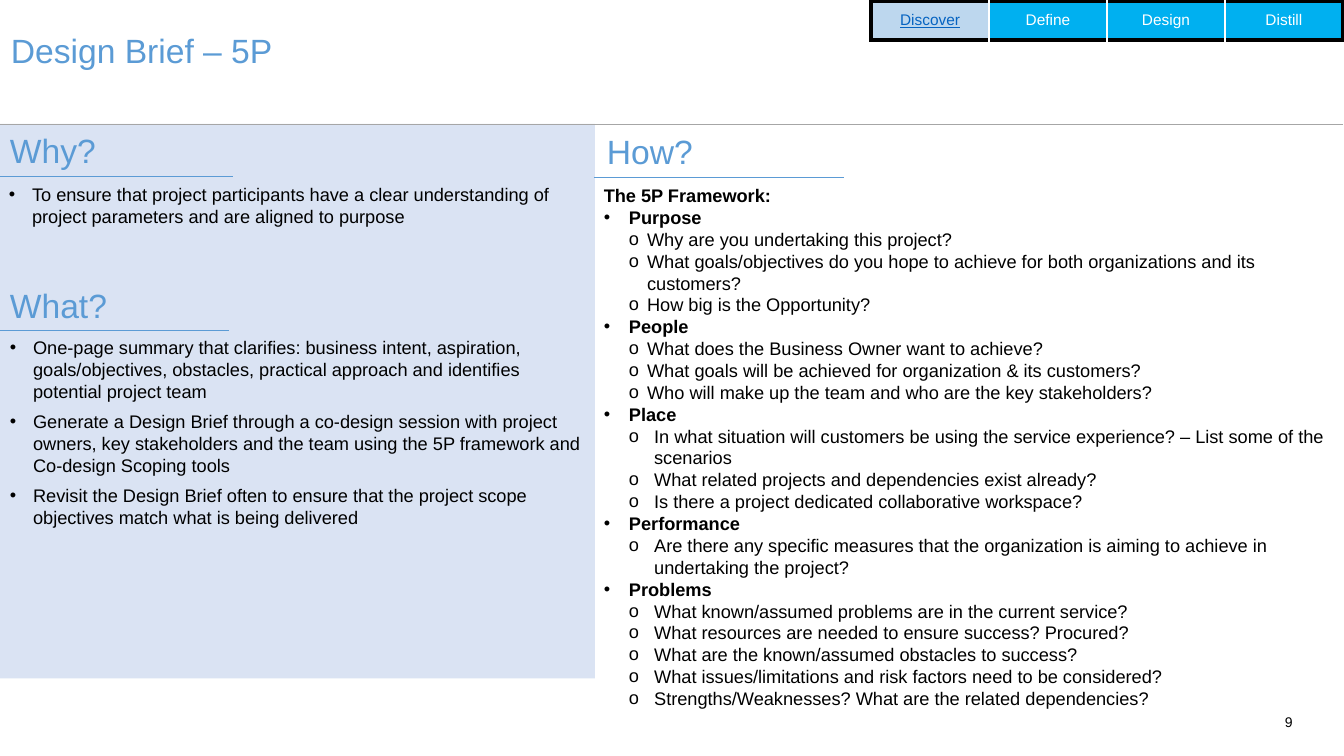
from dataclasses import dataclass

from pptx import Presentation
from pptx import util as u
from pptx.dml.color import RGBColor
from pptx.enum import shapes, text
from pptx.oxml.ns import qn
from lxml import etree


@dataclass(frozen=True)
class Theme:
    font: str = "Arial"
    heading: str = "5B9BD5"
    body: str = "000000"
    white: str = "FFFFFF"
    panel: str = "DAE3F3"
    rule: str = "A6A6A6"
    tab: str = "00B0F0"
    active_tab: str = "BDD7EE"
    link: str = "0563C1"
    heading_size: float = 24
    body_size: float = 13
    tab_size: float = 11
    number_size: float = 10


def rgb(value):
    return RGBColor.from_string(value)


def add_xml(parent, tag, **attrs):
    return etree.SubElement(parent, qn(tag), attrs)


def write(p, content, size, color, font, bold=False, underline=False,
          align=None, after=None, bullet=None, indent=0, hang=0, level=0):
    """Fill a paragraph; bullet text starts at indent, its mark hang inches before."""
    p.level = level
    if align is not None:
        p.alignment = align
    if after is not None:
        p.space_after = u.Pt(after)
    if bullet:
        pr = p._p.get_or_add_pPr()
        pr.set("marL", str(u.Inches(indent)))
        pr.set("indent", str(-u.Inches(hang)))
        add_xml(pr, "a:buFont", typeface=font)
        add_xml(pr, "a:buChar", char=bullet)
    r = p.add_run()
    r.text = content
    r.font.name, r.font.size = font, u.Pt(size)
    r.font.bold, r.font.underline = bold, underline
    r.font.color.rgb = rgb(color)


class Deck:
    def __init__(self, theme):
        self.theme = theme
        self.prs = Presentation()
        self.prs.slide_width, self.prs.slide_height = u.Inches(13.33), u.Inches(7.5)
        self.s = self.prs.slides.add_slide(self.prs.slide_layouts[6])

    def panel(self, *box):
        sp = self.s.shapes.add_shape(shapes.MSO_SHAPE.RECTANGLE, *map(u.Inches, box))
        sp.shadow.inherit = False
        sp.fill.solid()
        sp.fill.fore_color.rgb = rgb(self.theme.panel)
        sp.line.fill.background()

    def rule(self, left, right, y, color):
        line = self.s.shapes.add_connector(
            shapes.MSO_CONNECTOR.STRAIGHT, *map(u.Inches, (left, y, right, y)))
        line.line.color.rgb = rgb(color)
        line.line.width = u.Pt(0.5)
        add_xml(line._element.spPr, "a:effectLst")

    def text(self, box, items, size, color, wrap=True, inset=None):
        """Add a text box; items are (text, format) pairs, one per paragraph."""
        tf = self.s.shapes.add_textbox(*map(u.Inches, box)).text_frame
        tf.word_wrap = wrap
        tf.auto_size = text.MSO_AUTO_SIZE.SHAPE_TO_FIT_TEXT
        if inset is not None:
            tf.margin_left = tf.margin_right = u.Inches(inset)
            tf.margin_top = tf.margin_bottom = u.Inches(inset)
        for i, (content, style) in enumerate(items):
            p = tf.add_paragraph() if i else tf.paragraphs[0]
            write(p, content, size, color, self.theme.font, **style)

    def heading(self, content, *box, wrap=True):
        t = self.theme
        self.text(box, [(content, {})], t.heading_size, t.heading, wrap)

    def body(self, items, *box):
        self.text(box, items, self.theme.body_size, self.theme.body)

    def border(self, cell, side, color, width):
        ln = add_xml(cell._tc.get_or_add_tcPr(), f"a:ln{side}", w=str(u.Pt(width)))
        add_xml(add_xml(ln, "a:solidFill"), "a:srgbClr", val=color)

    def tabs(self, labels, active, *box):
        t = self.theme
        table = self.s.shapes.add_table(1, len(labels), *map(u.Inches, box)).table
        last = len(labels) - 1
        outer, inner = (t.body, 3), (t.white, 1)
        for i, label in enumerate(labels):
            cell = table.cell(0, i)
            cell.vertical_anchor = text.MSO_ANCHOR.MIDDLE
            on = label == active
            write(cell.text_frame.paragraphs[0], label, t.tab_size,
                  t.link if on else t.white, t.font, underline=on,
                  align=text.PP_ALIGN.CENTER)
            self.border(cell, "L", *(inner if i else outer))
            self.border(cell, "R", *(inner if i < last else outer))
            self.border(cell, "T", *outer)
            self.border(cell, "B", *outer)
            cell.fill.solid()
            cell.fill.fore_color.rgb = rgb(t.active_tab if on else t.tab)


WHY = ["To ensure that project participants have a clear understanding of "
       "project parameters and are aligned to purpose"]
WHAT = [
    "One-page summary that clarifies: business intent, aspiration, "
    "goals/objectives, obstacles, practical approach and identifies potential project team",
    "Generate a Design Brief through a co-design session with project owners, key "
    "stakeholders and the team using the 5P framework and Co-design Scoping tools",
    "Revisit the Design Brief often to ensure that the project scope objectives "
    "match what is being delivered",
]
NARROW, WIDE = 0.18, 0.25
FRAMEWORK = [
    ("Purpose", NARROW, [
        "Why are you undertaking this project?",
        "What goals/objectives do you hope to achieve for both organizations and its customers?",
        "How big is the Opportunity?"]),
    ("People", NARROW, [
        "What does the Business Owner want to achieve?",
        "What goals will be achieved for organization & its customers?",
        "Who will make up the team and who are the key stakeholders?"]),
    ("Place", WIDE, [
        "In what situation will customers be using the service experience? – "
        "List some of the scenarios",
        "What related projects and dependencies exist already?",
        "Is there a project dedicated collaborative workspace?"]),
    ("Performance", WIDE, [
        "Are there any specific measures that the organization is aiming to achieve in "
        "undertaking the project?"]),
    ("Problems", WIDE, [
        "What known/assumed problems are in the current service?",
        "What resources are needed to ensure success? Procured?",
        "What are the known/assumed obstacles to success?",
        "What issues/limitations and risk factors need to be considered?",
        "Strengths/Weaknesses? What are the related dependencies?"]),
]


def bullets(lines, after):
    return [(line, dict(bullet="•", indent=0.23, hang=0.23, after=after)) for line in lines]


def framework_items():
    items = [("The 5P Framework:", dict(bold=True))]
    for name, hang, questions in FRAMEWORK:
        items.append((name, dict(bold=True, bullet="•", indent=0.25, hang=0.25)))
        items += [(q, dict(level=1, bullet="o", indent=0.25 + hang, hang=hang))
                  for q in questions]
    return items


def main():
    t = Theme()
    deck = Deck(t)
    deck.text((12.48, 7.08, 0.34, 0.17), [("9", dict(align=text.PP_ALIGN.RIGHT))],
              t.number_size, t.body, inset=0)
    deck.panel(0, 1.23, 5.9, 5.5)
    deck.heading("Design Brief – 5P", 0.01, 0.25, 8.16, 0.5)
    deck.heading("Why?", 0, 1.24, 1.07, 0.51, wrap=False)
    deck.heading("What?", 0, 2.78, 1.19, 0.51, wrap=False)
    deck.heading("How?", 5.92, 1.25, 1.22, 0.51)
    deck.rule(-0.02, 2.31, 1.75, t.heading)
    deck.rule(-0.02, 2.27, 3.28, t.heading)
    deck.rule(5.89, 8.37, 1.76, t.heading)
    deck.rule(-0.02, 13.32, 1.23, t.rule)
    deck.body(bullets(WHY, 7.3), -0.01, 1.77, 5.93, 0.54)
    deck.body(bullets(WHAT, 6), 0, 3.29, 5.92, 2.34)
    deck.body(framework_items(), 5.89, 1.78, 7.43, 5.35)
    deck.tabs(["Discover", "Define", "Design", "Distill"], "Discover",
              8.64, 0.01, 4.68, 0.39)
    deck.prs.save("out.pptx")


if __name__ == "__main__":
    main()
